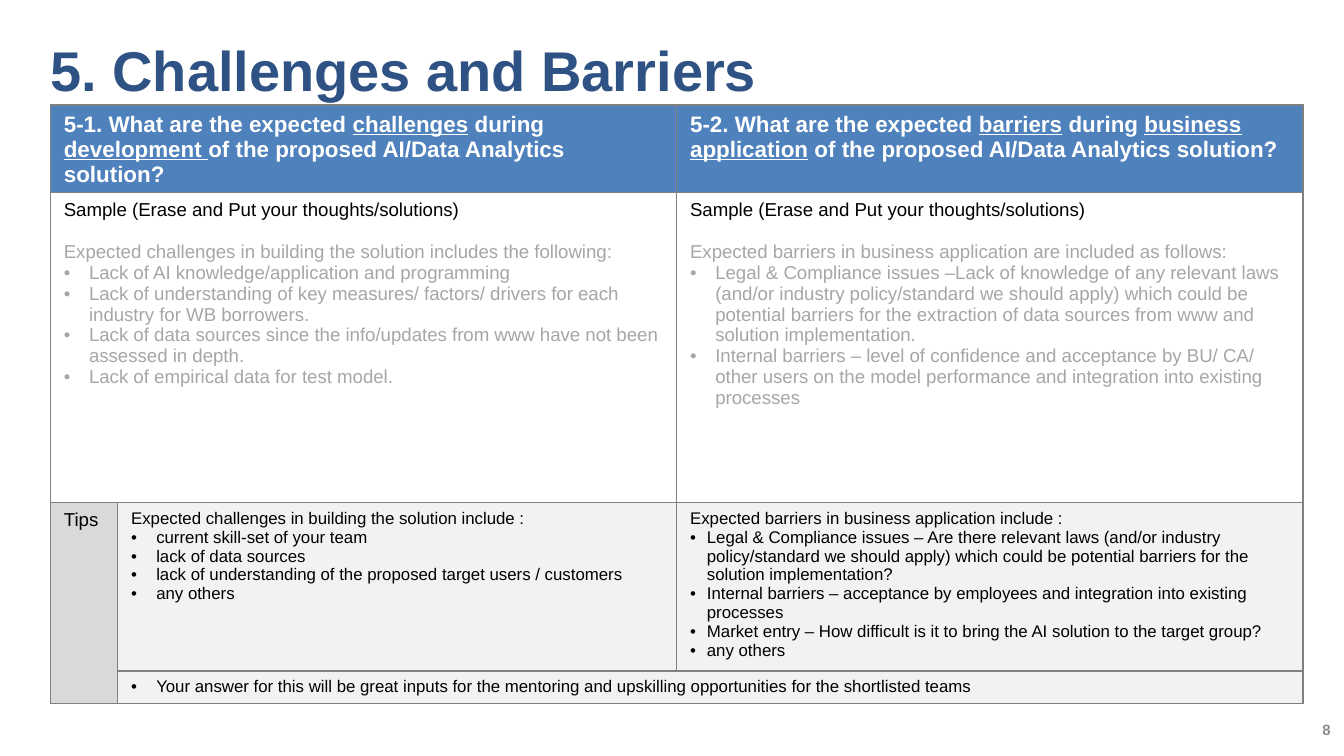
import pptx
import pptx.dml.color
import pptx.enum.text
import pptx.oxml
import pptx.oxml.ns
import pptx.util

Pt = pptx.util.Pt
ALIGN = pptx.enum.text.PP_ALIGN
ANCHOR = pptx.enum.text.MSO_ANCHOR

COLORS = {
    "title": "2F5284", "number": "8C8C8C", "header": "4F81BD",
    "white": "FFFFFF", "black": "000000", "sample": "A6A6A6",
    "label": "D9D9D9", "tips": "F2F2F2", "border": "808080",
}
COLUMNS = [36, 299.5, 335.5]
ROWS = [47, 166, 88, 17.5]

HEADERS = [
    "5-1. What are the expected _challenges_ during _development _"
    "of the proposed AI/Data Analytics solution?",
    "5-2. What are the expected _barriers_ during _business application_"
    " of the proposed AI/Data Analytics solution?",
]
SAMPLE = "Sample (Erase and Put your thoughts/solutions)"
SAMPLES = [
    ("Expected challenges in building the solution includes the following:", [
        "Lack of AI knowledge/application and programming",
        "Lack of understanding of key measures/ factors/ drivers for each "
        "industry for WB borrowers.",
        "Lack of data sources since the info/updates from www have not been "
        "assessed in depth.",
        "Lack of empirical data for test model.",
    ]),
    ("Expected barriers in business application are included as follows:", [
        "Legal & Compliance issues –Lack of knowledge of any relevant laws "
        "(and/or industry policy/standard we should apply) which could be "
        "potential barriers for the extraction of data sources from www and "
        "solution implementation.",
        "Internal barriers – level of confidence and acceptance by BU/ CA/ "
        "other users on the model performance and integration into existing "
        "processes",
    ]),
]
TIPS = [
    ("Expected challenges in building the solution include :", 13.5, [
        "current skill-set of your team",
        "lack of data sources",
        "lack of understanding of the proposed target users / customers",
        "any others",
    ]),
    ("Expected barriers in business application include :", 9, [
        "Legal & Compliance issues – Are there relevant laws (and/or industry "
        "policy/standard we should apply) which could be potential barriers "
        "for the solution implementation?",
        "Internal barriers – acceptance by employees and integration into "
        "existing processes",
        "Market entry – How difficult is it to bring the AI solution to the "
        "target group?",
        "any others",
    ]),
]
CLOSING_TIP = ("Your answer for this will be great inputs for the mentoring "
               "and upskilling opportunities for the shortlisted teams")


def rgb(name):
    return pptx.dml.color.RGBColor.from_string(COLORS[name])


def add_text(tf, text, size=10, color="black", bold=False, align=ALIGN.LEFT,
             before=0, indent=0):
    """Add a paragraph; underscores switch underlining, an indent adds a bullet."""
    p = tf.paragraphs[0]
    if p.runs:
        p = tf.add_paragraph()
    p.alignment = align
    ns = pptx.oxml.ns.nsdecls("a")
    if before:
        p.space_before = Pt(before)
    if indent:
        pPr = p._p.get_or_add_pPr()
        pPr.set("marL", str(Pt(indent)))
        pPr.set("indent", str(-Pt(indent)))
        pPr.append(pptx.oxml.parse_xml(f'<a:buFont {ns} typeface="Arial"/>'))
        pPr.append(pptx.oxml.parse_xml(f'<a:buChar {ns} char="•"/>'))
    for i, part in enumerate(text.split("_")):
        if part:
            r = p.add_run()
            r.text = part
            r.font.name = "Arial"
            r.font.size = Pt(size)
            r.font.bold = bold
            r.font.underline = i % 2 == 1
            r.font.color.rgb = rgb(color)
    # The paragraph mark takes the text size, so it cannot stretch a row
    p._p.append(pptx.oxml.parse_xml(f'<a:endParaRPr {ns} sz="{size * 100}"/>'))


def add_bullets(tf, items, indent, **fmt):
    for item in items:
        add_text(tf, item, indent=indent, **fmt)


def fill_cell(cell, color):
    cell.fill.solid()
    cell.fill.fore_color.rgb = rgb(color)


def set_borders(cell):
    tcPr = cell._tc.get_or_add_tcPr()
    for i, side in enumerate("LRTB"):
        tcPr.insert(i, pptx.oxml.parse_xml(
            f'<a:ln{side} {pptx.oxml.ns.nsdecls("a")} w="{Pt(1)}"><a:solidFill>'
            f'<a:srgbClr val="{COLORS["border"]}"/></a:solidFill></a:ln{side}>'))


def add_title(s):
    sp = s.shapes.title
    sp.left, sp.top, sp.width, sp.height = Pt(27), Pt(19), Pt(562), Pt(57)
    tf = sp.text_frame
    tf.margin_left = tf.margin_right = tf.margin_top = tf.margin_bottom = 0
    tf.vertical_anchor = ANCHOR.TOP
    tf.auto_size = pptx.enum.text.MSO_AUTO_SIZE.NONE
    add_text(tf, "5. Challenges and Barriers", size=30, color="title", bold=True)


def add_page_number(s):
    sp = s.shapes.add_textbox(Pt(673), Pt(376.5), Pt(47), Pt(29))
    tf = sp.text_frame
    tf.word_wrap = True
    tf.vertical_anchor = ANCHOR.MIDDLE
    add_text(tf, "8", size=8, color="number", bold=True, align=ALIGN.RIGHT)


def add_question_table(s):
    frame = s.shapes.add_table(len(ROWS), len(COLUMNS), Pt(27), Pt(56.2),
                               Pt(sum(COLUMNS)), Pt(sum(ROWS)))
    table = frame.table
    table.first_row = table.horz_banding = False
    for column, width in zip(table.columns, COLUMNS):
        column.width = Pt(width)
    for row, height in zip(table.rows, ROWS):
        row.height = Pt(height)

    # Grid: fills, borders and merged cells
    for r, color in enumerate(["header", "white", "tips", "tips"]):
        for c in range(len(COLUMNS)):
            cell = table.cell(r, c)
            cell.margin_bottom = 0
            fill_cell(cell, "label" if r >= 2 and c == 0 else color)
            set_borders(cell)
    for first, last in [((0, 0), (0, 1)), ((1, 0), (1, 1)),
                        ((2, 0), (3, 0)), ((3, 1), (3, 2))]:
        table.cell(*first).merge(table.cell(*last))

    # Questions and sample answers
    for c, header, (intro, items) in zip((0, 2), HEADERS, SAMPLES):
        add_text(table.cell(0, c).text_frame, header, size=12, color="white",
                 bold=True)
        tf = table.cell(1, c).text_frame
        add_text(tf, SAMPLE)
        add_text(tf, intro, color="sample", before=11.5)
        add_bullets(tf, items, 13.5, color="sample")

    # Tips
    add_text(table.cell(2, 0).text_frame, "Tips")
    for c, (intro, indent, items) in enumerate(TIPS, start=1):
        tf = table.cell(2, c).text_frame
        add_text(tf, intro, size=9)
        add_bullets(tf, items, indent, size=9)
    add_bullets(table.cell(3, 1).text_frame, [CLOSING_TIP], 13.5, size=9)


def main():
    prs = pptx.Presentation()
    prs.slide_width, prs.slide_height = Pt(720), Pt(405)
    s = prs.slides.add_slide(prs.slide_layouts[5])
    add_title(s)
    add_page_number(s)
    add_question_table(s)
    prs.save("out.pptx")


if __name__ == "__main__":
    main()
